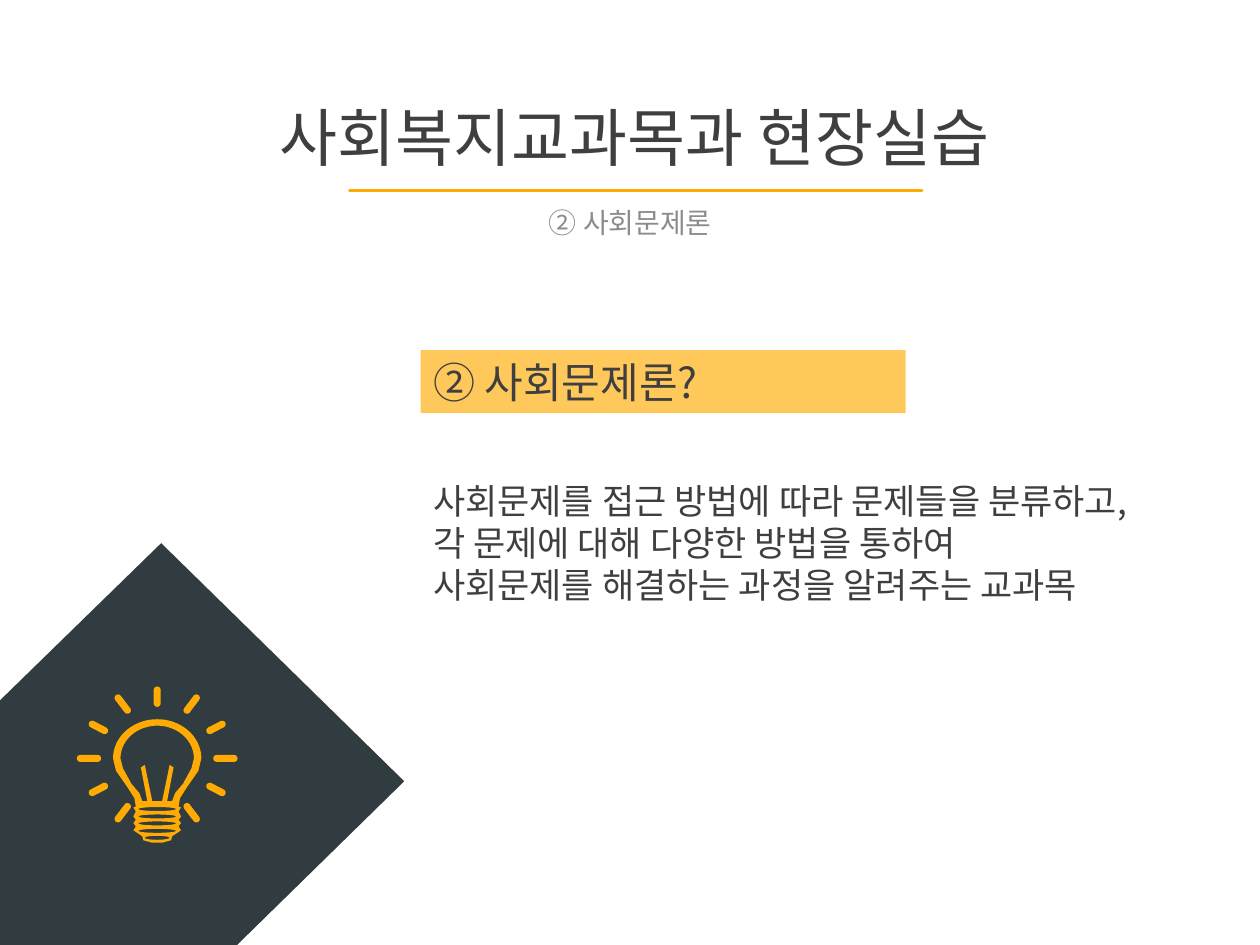
from dataclasses import dataclass
from math import atan2, cos, pi, sin

from lxml import etree
from pptx import Presentation
from pptx.dml.color import RGBColor
from pptx.enum.shapes import MSO_CONNECTOR, MSO_SHAPE
from pptx.enum.text import MSO_ANCHOR, PP_ALIGN
from pptx.oxml.ns import qn
from pptx.util import Cm, Pt

LEFT, MID = PP_ALIGN.LEFT, PP_ALIGN.CENTER
TOP, CENTER = MSO_ANCHOR.TOP, MSO_ANCHOR.MIDDLE
RECT, LINE = MSO_SHAPE.RECTANGLE, MSO_CONNECTOR.STRAIGHT

Point = tuple[float, float]
Path = list[Point]


@dataclass(frozen=True)
class Theme:
    font: str = "Noto Sans CJK KR"
    ink: str = "3F3F3F"
    gray: str = "8C8C8C"
    slate: str = "313C41"
    gold: str = "FFAB03"
    pale: str = "FFC85B"
    title: int = 36
    head: int = 24
    body: int = 20
    small: int = 16


THEME = Theme()


@dataclass(frozen=True)
class Label:
    lines: tuple[str, ...]
    box: tuple[float, float, float, float]
    size: int
    color: str = THEME.ink
    align: PP_ALIGN = LEFT
    anchor: MSO_ANCHOR = TOP
    space: float = 1.0
    before: int = 0
    fill: str = ""


LABELS = (
    Label(("사회문제를 접근 방법에 따라 문제들을 분류하고,",
           "각 문제에 대해 다양한 방법을 통하여",
           "사회문제를 해결하는 과정을 알려주는 교과목"),
          (8.48, 9.55, 15.19, 2.82), THEME.body),
    Label(("사회복지교과목과 현장실습",), (2.18, 1.65, 21.23, 2.41),
          THEME.title, align=MID, anchor=CENTER, space=0.9),
    Label(("② 사회문제론",), (2.06, 4.09, 21.29, 0.91), THEME.small,
          THEME.gray, MID, space=0.9, before=10),
    Label(("② 사회문제론?",), (8.48, 7.06, 9.78, 1.27), THEME.head,
          fill=THEME.pale),
)

DIAMOND = [(3.25, 10.95), (8.15, 15.75), (4.78, 19.05), (0, 19.05), (0, 14.12)]

HUB = (3.17, 15.29)
GLASS = [(0.83, 0.25), (0.6, 0.58), (0.46, 0.8), (0.43, 0.97), (0.48, 0.99),
         (0.43, 1.07), (0.48, 1.17), (0.43, 1.24), (0.48, 1.3), (0.43, 1.37),
         (0.48, 1.45), (0.3, 1.57), (0.28, 1.65), (0.1, 1.7)]
HOLLOW = [(0.69, 0.2), (0.52, 0.51), (0.36, 0.7), (0.3, 0.86), (0.2, 0.86),
          (0.33, 0.18), (0.25, 0.13), (0.1, 0.86)]
SLITS = ((1.02, 0.38), (1.17, 0.38), (1.31, 0.38), (1.46, 0.38), (1.6, 0.25))
RAYS = (((0.79, 1.22), (0.6, 0.97)), ((1.31, 0.69), (1.06, 0.56)))
THICK = 0.07


def rgb(code: str) -> RGBColor:
    return RGBColor.from_string(code)


def arc(mid: Point, rx: float, ry: float, start: float, sweep: float,
        steps: int = 24) -> Path:
    turns = [start + sweep * i / steps for i in range(steps + 1)]
    return [(mid[0] + rx * cos(t), mid[1] + ry * sin(t)) for t in turns]


def ray(far: Point, near: Point) -> Path:
    turn = atan2(far[1] - near[1], far[0] - near[0])
    return (arc(far, THICK, THICK, turn - pi / 2, pi, 8)
            + arc(near, THICK, THICK, turn + pi / 2, pi, 8))


def dome(rx: float, ry: float, side: Path) -> Path:
    half = arc((0, 0), rx, ry, -pi / 2, pi / 2) + side
    return half + [(-x, y) for x, y in reversed(half)]


def bulb() -> list[Path]:
    paths = [dome(0.89, 0.79, GLASS), dome(0.74, 0.66, HOLLOW)]
    paths += [arc((0, y), rx, 0.04, 0, 2 * pi) for y, rx in SLITS]
    paths.append(ray((0, -1.38), (0, -1.11)))
    for sx in (-1, 1):
        paths.append(ray((sx * 1.55, 0), (sx * 1.2, 0)))
        for sy in (-1, 1):
            paths += [ray((sx * a, sy * b), (sx * c, sy * d))
                      for (a, b), (c, d) in RAYS]
    return [[(HUB[0] + x, HUB[1] + y) for x, y in path] for path in paths]


def trace(shapes, paths: list[Path], color: str) -> None:
    pens = [[(Cm(x), Cm(y)) for x, y in path] for path in paths]
    form = shapes.build_freeform(*pens[0][0])
    form.add_line_segments(pens[0][1:])
    for pen in pens[1:]:
        form.move_to(*pen[0])
        form.add_line_segments(pen[1:])
    paint(form.convert_to_shape(), color)


def paint(shape, color: str) -> None:
    shape.shadow.inherit = False
    shape.fill.solid()
    shape.fill.fore_color.rgb = rgb(color)
    shape.line.fill.background()


def write(shapes, label: Label) -> None:
    box = [Cm(v) for v in label.box]
    if label.fill:
        shape = shapes.add_shape(RECT, *box)
        paint(shape, label.fill)
    else:
        shape = shapes.add_textbox(*box)
    frame = shape.text_frame
    frame.word_wrap = True
    frame.vertical_anchor = label.anchor
    frame.text = "\n".join(label.lines)
    for para in frame.paragraphs:
        para.alignment = label.align
        para.line_spacing = label.space
        para.space_before = Pt(label.before)
        font = para.font
        font.name = THEME.font
        font.size = Pt(label.size)
        font.color.rgb = rgb(label.color)
        props = para._p.pPr.find(qn("a:defRPr"))
        latin = props.find(qn("a:latin"))
        east = etree.Element(qn("a:ea"), typeface=THEME.font)
        latin.addnext(east)


def rule(shapes) -> None:
    line = shapes.add_connector(LINE, Cm(7.06), Cm(3.84), Cm(18.57), Cm(3.84))
    line.line.color.rgb = rgb(THEME.gold)
    line.line.width = Pt(2.25)
    props = line._element.spPr
    props.find(qn("a:ln")).set("cap", "rnd")
    etree.SubElement(props, qn("a:effectLst"))


def main() -> None:
    deck = Presentation()
    deck.slide_width, deck.slide_height = Cm(25.4), Cm(19.05)
    shapes = deck.slides.add_slide(deck.slide_layouts[6]).shapes
    trace(shapes, [DIAMOND], THEME.slate)
    for label in LABELS:
        write(shapes, label)
    rule(shapes)
    trace(shapes, bulb(), THEME.gold)
    deck.save("out.pptx")


if __name__ == "__main__":
    main()
